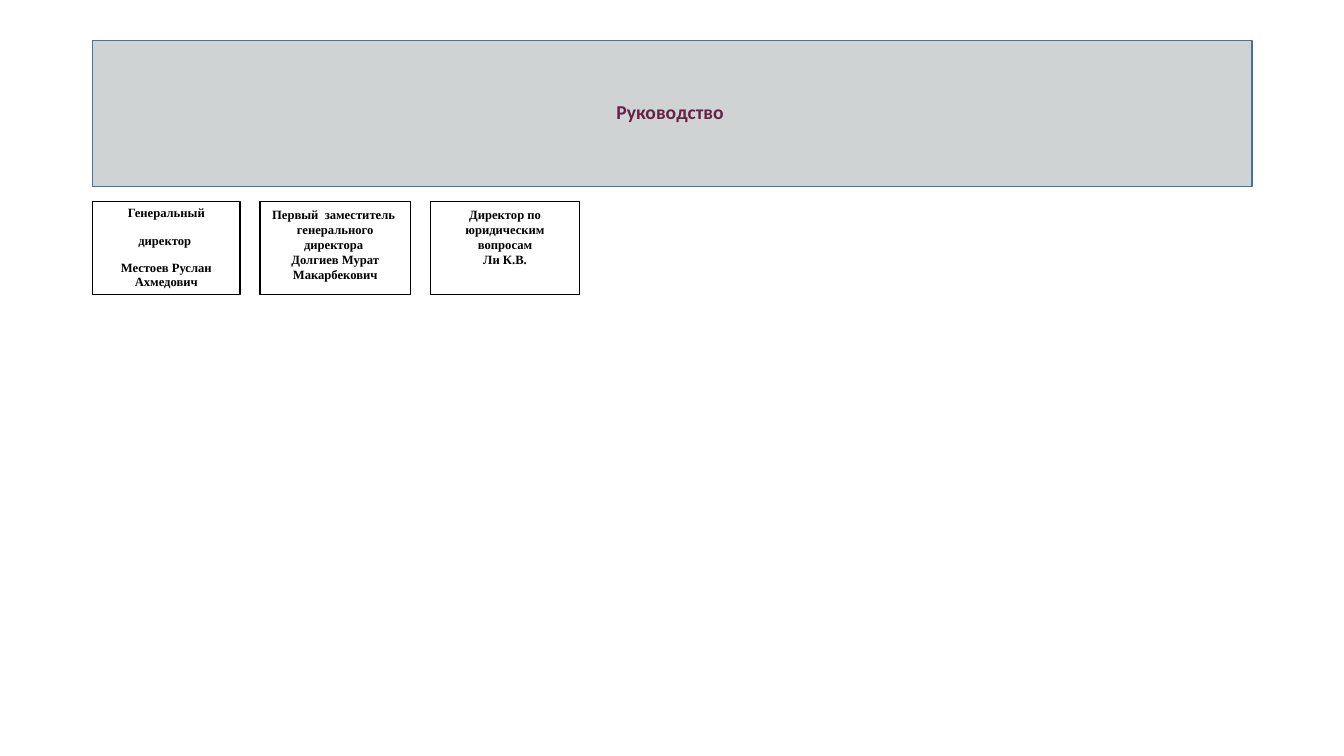
from dataclasses import dataclass

from pptx import Presentation
from pptx.dml.color import RGBColor
from pptx.enum.shapes import MSO_SHAPE
from pptx.enum.text import MSO_ANCHOR, PP_ALIGN
from pptx.util import Pt

RECTANGLE = MSO_SHAPE.RECTANGLE
TOP, MIDDLE = MSO_ANCHOR.TOP, MSO_ANCHOR.MIDDLE
CENTER = PP_ALIGN.CENTER


@dataclass(frozen=True)
class Theme:
    """Colours, fonts and type sizes of the slide."""

    banner_fill: str = "D0D3D4"
    banner_line: str = "43739E"
    banner_text: str = "672146"
    card_fill: str = "FFFFFF"
    ink: str = "000000"
    banner_font: str = "Calibri"
    card_font: str = "Times New Roman"
    banner_size: int = 14
    card_size: int = 9


THEME = Theme()
LEFT = 66.24
BANNER_TOP, BANNER_WIDTH, BANNER_HEIGHT = 28.8, 828, 104.4
CARD_TOP, CARD_HEIGHT, CARD_GAP = 144, 66.24, 14.4
CARDS = [
    (105.12, ["Генеральный", "директор ", "Местоев Руслан Ахмедович"],
     {"line_spacing": 0.9, "space_before": 10}),
    (107.28, ["Первый  заместитель  генерального", "директора ",
              "Долгиев Мурат Макарбекович"], {}),
    (106.56, ["Директор по", "юридическим", "вопросам", "Ли К.В."], {}),
]


def add_box(page, left, top, width, height, *, fill, line):
    """Add a filled, outlined rectangle without a shadow."""
    box = page.shapes.add_shape(RECTANGLE, Pt(left), Pt(top), Pt(width), Pt(height))
    box.shadow.inherit = False
    box.fill.solid()
    box.fill.fore_color.rgb = RGBColor.from_string(fill)
    box.line.color.rgb = RGBColor.from_string(line)
    box.line.width = Pt(1)
    return box


def write_text(box, lines, *, font, size, color, anchor=TOP,
               line_spacing=1.0, space_before=0):
    """Fill a box with bold centred paragraphs."""
    frame = box.text_frame
    frame.word_wrap = True
    frame.vertical_anchor = anchor
    for index, line in enumerate(lines):
        para = frame.add_paragraph() if index else frame.paragraphs[0]
        para.alignment = CENTER
        para.line_spacing = line_spacing
        para.space_before = Pt(space_before)
        span = para.add_run()
        span.text = line
        span.font.name = font
        span.font.size = Pt(size)
        span.font.bold = True
        span.font.color.rgb = RGBColor.from_string(color)


def add_banner(page):
    """Add the heading band across the slide."""
    banner = add_box(page, LEFT, BANNER_TOP, BANNER_WIDTH, BANNER_HEIGHT,
                     fill=THEME.banner_fill, line=THEME.banner_line)
    write_text(banner, ["Руководство "], font=THEME.banner_font,
               size=THEME.banner_size, color=THEME.banner_text,
               anchor=MIDDLE, line_spacing=0.9)


def add_cards(page):
    """Add the row of manager cards, separated by equal gaps."""
    left = LEFT
    for width, lines, spacing in CARDS:
        card = add_box(page, left, CARD_TOP, width, CARD_HEIGHT,
                       fill=THEME.card_fill, line=THEME.ink)
        write_text(card, lines, font=THEME.card_font, size=THEME.card_size,
                   color=THEME.ink, **spacing)
        left += width + CARD_GAP


def main():
    """Build the management slide and save it."""
    deck = Presentation()
    deck.slide_width, deck.slide_height = Pt(960), Pt(540)
    page = deck.slides.add_slide(deck.slide_layouts[6])
    add_banner(page)
    add_cards(page)
    deck.save("out.pptx")


if __name__ == "__main__":
    main()
